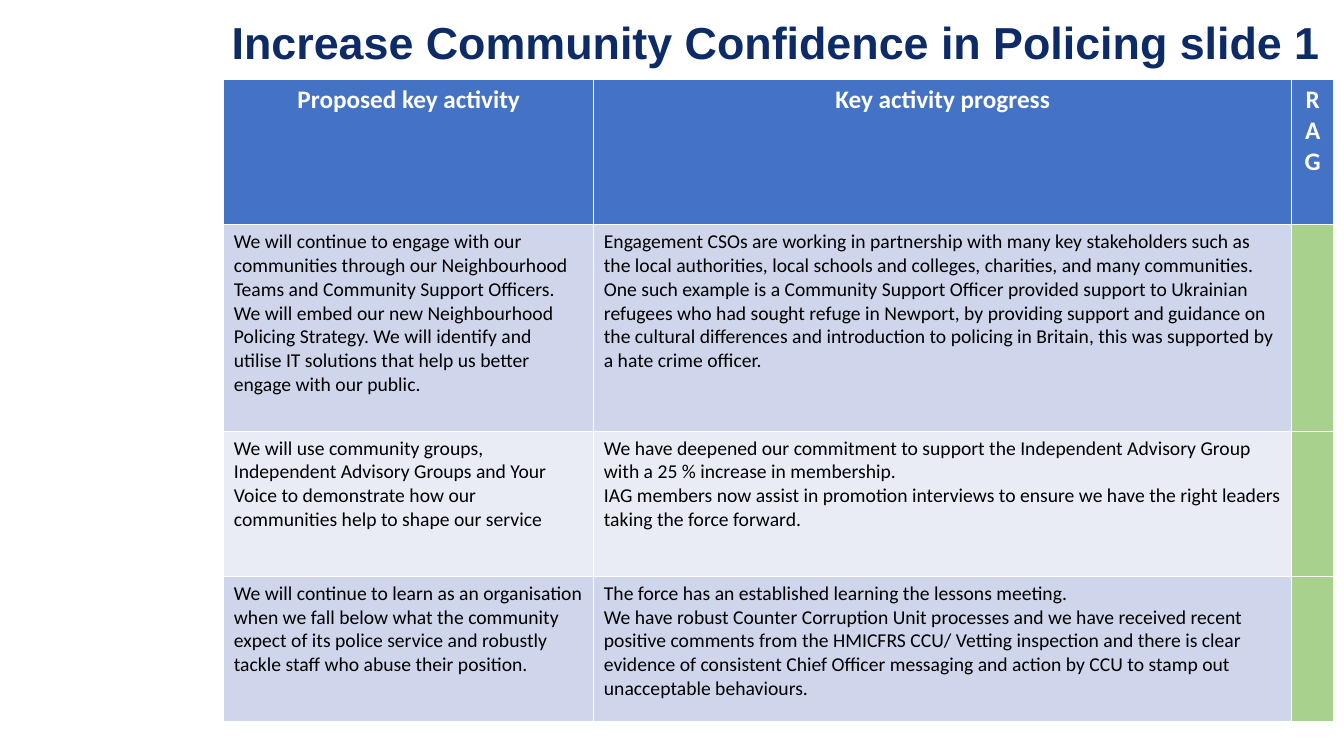
from pptx import Presentation
from pptx.dml.color import RGBColor
from pptx.enum.text import MSO_ANCHOR, PP_ALIGN
from pptx.util import Inches, Pt

CENTER, LEFT = PP_ALIGN.CENTER, PP_ALIGN.LEFT
MIDDLE = MSO_ANCHOR.MIDDLE
COLORS = {
    "navy": "0D2B67", "head": "4472C4", "white": "FFFFFF", "black": "000000",
    "dark": "CFD5EA", "light": "E9EBF5", "green": "A9D18E",
}


def color(name):
    return RGBColor.from_string(COLORS[name])


def style(para, face, size, tint, bold, align):
    para.alignment = align
    font = para.font
    font.name, font.size, font.bold = face, Pt(size), bold
    font.color.rgb = color(tint)


deck = Presentation()
deck.slide_width, deck.slide_height = Inches(13.33), Inches(7.5)
slide = deck.slides.add_slide(deck.slide_layouts[6])

# Title
title = slide.shapes.add_textbox(Inches(2.2), Inches(0.13), Inches(11.03), Inches(0.64))
frame = title.text_frame
frame.word_wrap = True
frame.vertical_anchor = MIDDLE
frame.text = "Increase Community Confidence in Policing slide 1"
frame.paragraphs[0].line_spacing = 0.9
style(frame.paragraphs[0], "Arial", 32, "navy", True, LEFT)

# Table content: activity, progress, status
rows = [
    ("Proposed key activity", "Key activity progress", "RAG"),
    (
        "We will continue to engage with our communities through our Neighbourhood Teams "
        "and Community Support Officers. We will embed our new Neighbourhood Policing "
        "Strategy. We will identify and utilise IT solutions that help us better engage "
        "with our public.",
        "Engagement CSOs are working in partnership with many key stakeholders such as "
        "the local authorities, local schools and colleges, charities, and many "
        "communities. One such example is a Community Support Officer provided support "
        "to Ukrainian refugees who had sought refuge in Newport, by providing support "
        "and guidance on the cultural differences and introduction to policing in "
        "Britain, this was supported by a hate crime officer.",
        "",
    ),
    (
        "We will use community groups, Independent Advisory Groups and Your Voice to "
        "demonstrate how our communities help to shape our service",
        "We have deepened our commitment to support the Independent Advisory Group with "
        "a 25 % increase in membership.\n"
        "IAG members now assist in promotion interviews to ensure we have the right "
        "leaders taking the force forward.",
        "",
    ),
    (
        "We will continue to learn as an organisation when we fall below what the "
        "community expect of its police service and robustly tackle staff who abuse "
        "their position.",
        "The force has an established learning the lessons meeting.\n"
        "We have robust Counter Corruption Unit processes and we have received recent "
        "positive comments from the HMICFRS CCU/ Vetting inspection and there is clear "
        "evidence of consistent Chief Officer messaging and action by CCU to stamp out "
        "unacceptable behaviours.",
        "",
    ),
]
widths = [3.67, 6.92, 0.42]
heights = [1.44, 2.05, 1.44, 1.44]

# Table grid
table = slide.shapes.add_table(
    len(rows), len(widths), Inches(2.22), Inches(0.79),
    Inches(sum(widths)), Inches(sum(heights))).table
for col, width in zip(table.columns, widths):
    col.width = Inches(width)
for row, height in zip(table.rows, heights):
    row.height = Inches(height)

# Cells: header, banded text, green status
for r, texts in enumerate(rows):
    for c, text in enumerate(texts):
        cell = table.cell(r, c)
        if r == 0:
            fill = "head"
        elif c == 2:
            fill = "green"
        else:
            fill = "dark" if r % 2 else "light"
        cell.fill.solid()
        cell.fill.fore_color.rgb = color(fill)
        cell.text = text
        for para in cell.text_frame.paragraphs:
            if r == 0:
                style(para, "Calibri", 18, "white", True, CENTER)
            else:
                style(para, "Calibri", 14, "black", False, LEFT)

deck.save("out.pptx")
